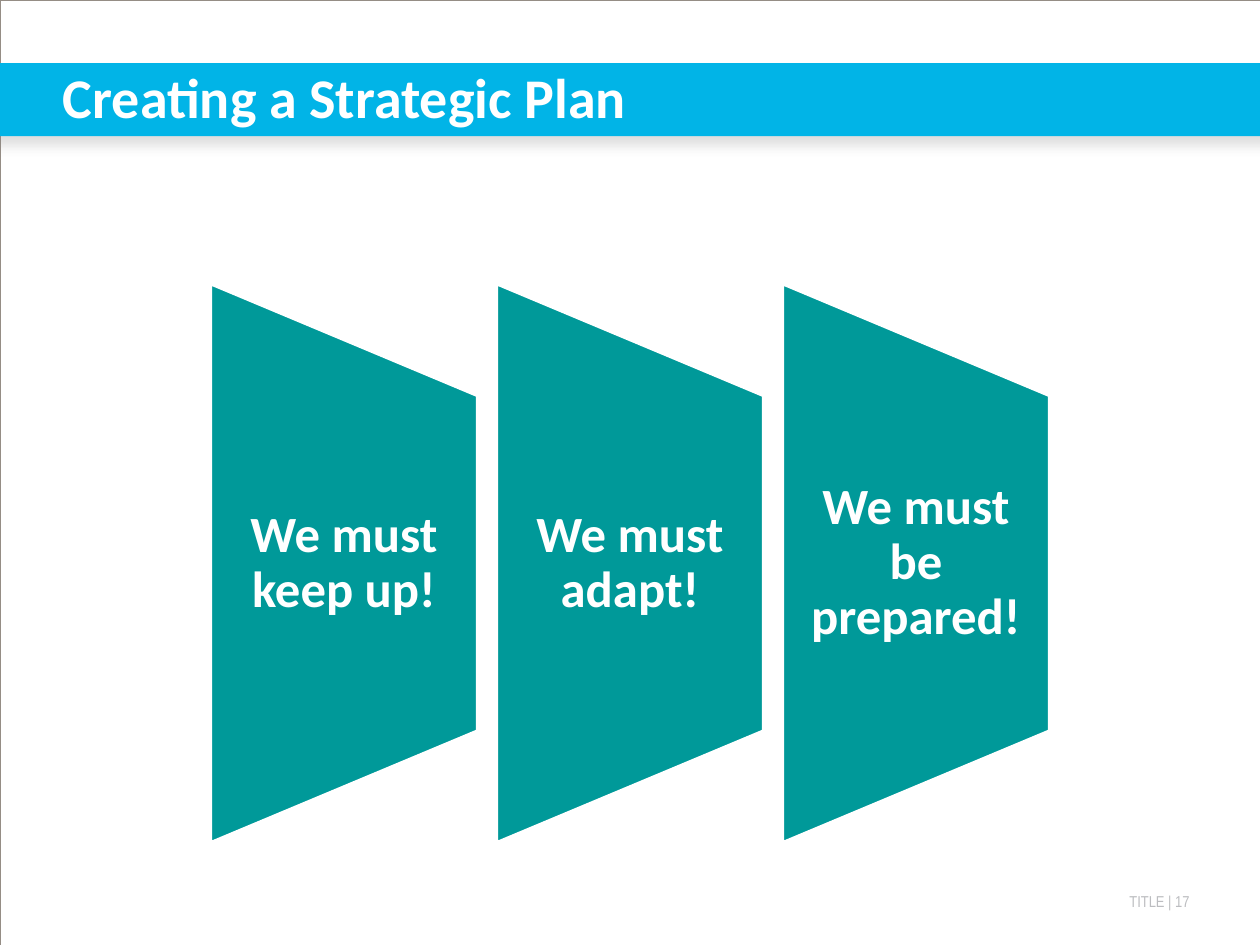
from lxml.etree import SubElement
from pptx import Presentation
from pptx.dml.color import RGBColor
from pptx.enum.shapes import MSO_SHAPE
from pptx.enum.text import MSO_ANCHOR, PP_ALIGN
from pptx.oxml.ns import qn
from pptx.util import Inches, Pt

COLORS = {
    "band": "01B4E7",
    "panel": "009999",
    "white": "FFFFFF",
    "frame": "958D85",
    "footer": "BCBDC0",
    "shadow": "808080",
}
SLIDE_W, SLIDE_H = 10, 7.5
BAND_TOP, BAND_H, BLEED = 0.5, 0.58, 0.08
PANEL_W, PANEL_H, PANEL_GAP = 2.12, 4.44, 0.15
PANEL_CENTER_Y, LABEL_H = 4.47, 2.67
MESSAGES = ["We must keep up!", "We must adapt!", "We must be prepared!"]


def rgb(name):
    """Return the named palette colour."""
    return RGBColor.from_string(COLORS[name])


def add_block(slide, preset, left, top, width, height, fill=None, line=None, weight=1):
    """Add a preset shape, its fill and outline drawn only when named."""
    block = slide.shapes.add_shape(
        preset, Inches(left), Inches(top), Inches(width), Inches(height))
    block.shadow.inherit = False
    if fill:
        block.fill.solid()
        block.fill.fore_color.rgb = rgb(fill)
    else:
        block.fill.background()
    if line:
        block.line.color.rgb = rgb(line)
        block.line.width = Pt(weight)
    else:
        block.line.fill.background()
    return block


def add_text(slide, text, left, top, width, height, *, size, font="Calibri",
             color="white", bold=False, align=PP_ALIGN.LEFT,
             anchor=MSO_ANCHOR.MIDDLE, insets=(0, 0), spacing=1.0, after=0):
    """Add a wrapped one-paragraph text box with the given format."""
    box = slide.shapes.add_textbox(
        Inches(left), Inches(top), Inches(width), Inches(height))
    frame = box.text_frame
    frame.word_wrap = True
    frame.vertical_anchor = anchor
    frame.margin_left, frame.margin_right = (Inches(inset) for inset in insets)
    frame.margin_top = frame.margin_bottom = 0
    paragraph = frame.paragraphs[0]
    paragraph.alignment = align
    paragraph.line_spacing = spacing
    paragraph.space_after = Pt(after)
    run = paragraph.add_run()
    run.text = text
    run.font.name = font
    run.font.size = Pt(size)
    run.font.bold = bold
    run.font.color.rgb = rgb(color)


def cast_shadow(block, blur, distance, opacity):
    """Give a block a soft shadow falling straight down."""
    effects = block._element.spPr.find(qn("a:effectLst"))
    shadow = SubElement(
        effects, qn("a:outerShdw"), blurRad=str(Pt(blur)), dist=str(Pt(distance)),
        dir="5400000", algn="ctr", rotWithShape="0")
    tint = SubElement(shadow, qn("a:srgbClr"), val=COLORS["shadow"])
    SubElement(tint, qn("a:alpha"), val=str(opacity * 1000))


def add_header(slide, title):
    """Draw the title band across the slide with its title."""
    band = add_block(slide, MSO_SHAPE.RECTANGLE, -BLEED, BAND_TOP,
                     SLIDE_W + 2 * BLEED, BAND_H, fill="band")
    cast_shadow(band, blur=7, distance=4.8, opacity=25)
    add_text(slide, title, 0.5, BAND_TOP, 9.17, 0.53, size=32, bold=True)


def add_panel(slide, message, left):
    """Draw one tapering panel, turned on its side, with an upright message."""
    panel = add_block(
        slide, MSO_SHAPE.FLOWCHART_MANUAL_OPERATION,
        left + (PANEL_W - PANEL_H) / 2, PANEL_CENTER_Y - PANEL_W / 2,
        PANEL_H, PANEL_W, fill="panel", line="white", weight=2)
    panel.rotation = 270
    add_text(slide, message, left, PANEL_CENTER_Y - LABEL_H / 2, PANEL_W, LABEL_H,
             size=29, bold=True, align=PP_ALIGN.CENTER, insets=(0.2, 0.2),
             spacing=0.9, after=10)


def main():
    """Build and save the slide."""
    deck = Presentation()
    deck.slide_width, deck.slide_height = Inches(SLIDE_W), Inches(SLIDE_H)
    slide = deck.slides.add_slide(deck.slide_layouts[6])

    add_text(slide, "TITLE | 17", 7.75, 7.08, 1.75, 0.15, size=9,
             font="Arial Narrow", color="footer", align=PP_ALIGN.RIGHT,
             anchor=MSO_ANCHOR.TOP, insets=(0, 0.06))
    add_block(slide, MSO_SHAPE.RECTANGLE, 0, 0, SLIDE_W, SLIDE_H,
              line="frame", weight=0.13)
    add_header(slide, "Creating a Strategic Plan")

    pitch = PANEL_W + PANEL_GAP
    first_left = (SLIDE_W - len(MESSAGES) * pitch + PANEL_GAP) / 2
    for column, message in enumerate(MESSAGES):
        add_panel(slide, message, first_left + column * pitch)

    deck.save("out.pptx")


if __name__ == "__main__":
    main()
